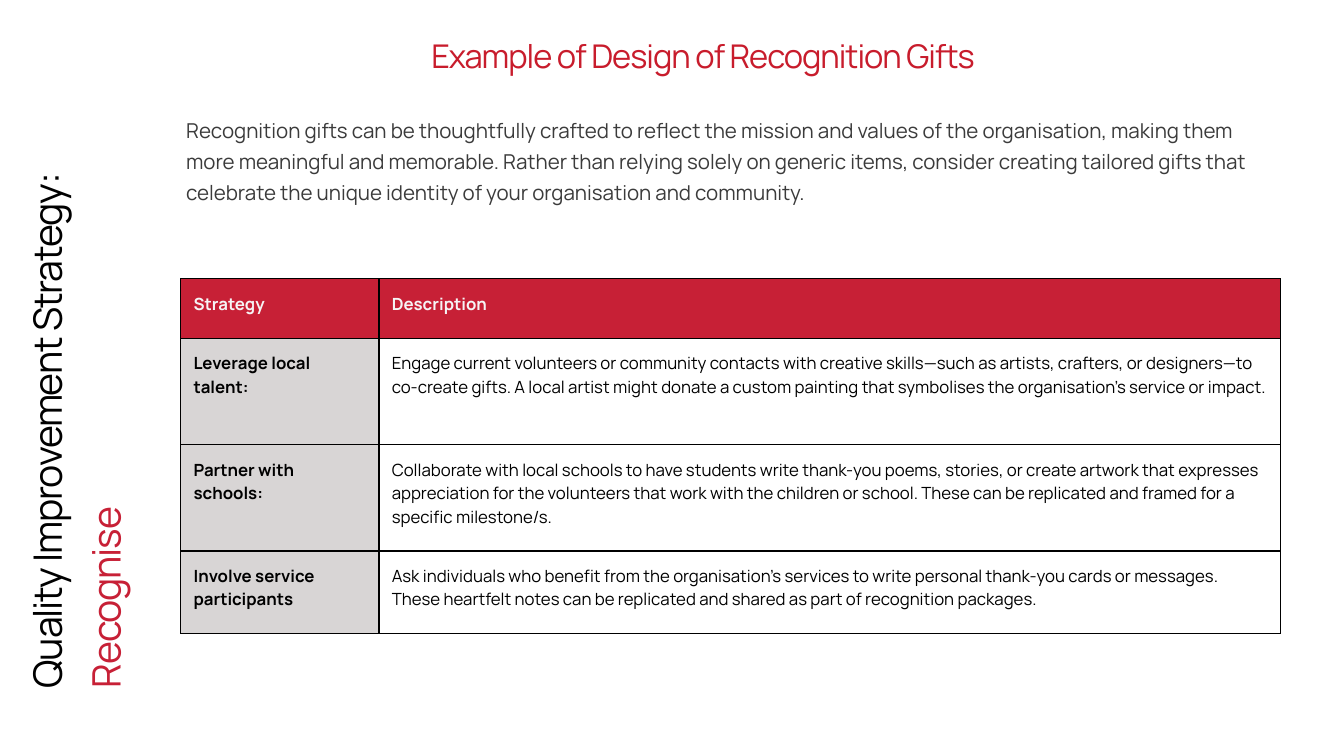
from lxml import etree
from pptx import Presentation
from pptx import util as u
from pptx.dml.color import RGBColor
from pptx.enum import text as t
from pptx.oxml import ns

Pt = u.Pt
hues = {"red": "C72036", "title": "C81C2C", "grey": "D8D5D5",
        "pale": "F6F4F5", "body": "3B3B3B", "black": "000000"}


def write(para, words, size=18, hue="black", lead=25.2, bold=False, gap=0):
    para.alignment = t.PP_ALIGN.LEFT
    para.line_spacing = Pt(lead)
    para.space_before = Pt(0)
    run = para.add_run()
    run.text = words
    font = run.font
    font.name, font.size, font.bold = "Manrope", Pt(size), bold
    font.color.rgb = RGBColor.from_string(hues[hue])
    if gap:
        font._element.set("spc", str(round(gap * 100)))


def place(box, left, top, width, height):
    box.left, box.top, box.width, box.height = map(Pt, (left, top, width, height))
    frame = box.text_frame
    frame.margin_left = frame.margin_right = Pt(0)
    frame.margin_top = frame.margin_bottom = Pt(0)
    frame.word_wrap = True
    frame.auto_size = t.MSO_AUTO_SIZE.NONE
    frame.vertical_anchor = t.MSO_ANCHOR.TOP
    return frame.paragraphs[0]


deck = Presentation()
deck.slide_width, deck.slide_height = Pt(1440), Pt(810)
slide = deck.slides.add_slide(deck.slide_layouts[1])

rows = [
    ("Strategy", "Description"),
    ("Leverage local talent:",
     "Engage current volunteers or community contacts with creative skills—such as "
     "artists, crafters, or designers—to co-create gifts. A local artist might donate "
     "a custom painting that symbolises the organisation’s service or impact."),
    ("Partner with schools:",
     "Collaborate with local schools to have students write thank-you poems, stories, "
     "or create artwork that expresses appreciation for the volunteers that work with "
     "the children or school. These can be replicated and framed for a specific "
     "milestone/s."),
    ("Involve service participants",
     "Ask individuals who benefit from the organisation’s services to write personal "
     "thank-you cards or messages. These heartfelt notes can be replicated and shared "
     "as part of recognition packages."),
]
wides = [212.4, 965.5]
highs = [64, 113.8, 113.8, 88.6]
grid = slide.shapes.add_table(len(rows), len(wides), Pt(193.7), Pt(298.8),
                              Pt(sum(wides)), Pt(sum(highs))).table
grid.first_row = grid.horz_banding = False
for col, wide in zip(grid.columns, wides):
    col.width = Pt(wide)

for r, row in enumerate(rows):
    grid.rows[r].height = Pt(highs[r])
    for c, words in enumerate(row):
        cell = grid.cell(r, c)
        cell.margin_left = cell.margin_right = Pt(13.7)
        cell.margin_top = cell.margin_bottom = Pt(13.7)
        props = cell._tc.get_or_add_tcPr()
        for side in ("lnL", "lnR", "lnT", "lnB"):
            line = etree.SubElement(props, ns.qn("a:" + side), w=str(Pt(1.5)))
            fill = etree.SubElement(line, ns.qn("a:solidFill"))
            etree.SubElement(fill, ns.qn("a:srgbClr"), val=hues["black"])
        head = r == 0
        if head or c == 0:
            cell.fill.solid()
            cell.fill.fore_color.rgb = RGBColor.from_string(hues["red" if head else "grey"])
        else:
            cell.fill.background()
        write(cell.text_frame.paragraphs[0], words,
              hue="pale" if head else "black", bold=head or c == 0)

side = slide.shapes.add_textbox(0, 0, 0, 0)
side.rotation = 270
para = place(side, -235.4, 364.3, 620, 126)
write(para, "Quality Improvement Strategy: ", size=42, lead=63, gap=-1.3)
write(para, "Recognise", size=42, hue="red", lead=63, gap=-1.3)

para = place(slide.shapes.title, 462.2, 35.3, 639.4, 91.4)
write(para, "Example of Design of Recognition Gifts",
      size=35, hue="title", lead=45.5, gap=-1.1)

para = place(slide.placeholders[1], 199.4, 120.2, 1165.7, 99.4)
write(para, "Recognition gifts can be thoughtfully crafted to reflect the mission and "
      "values of the organisation, making them more meaningful and memorable. Rather "
      "than relying solely on generic items, consider creating tailored gifts that "
      "celebrate the unique identity of your organisation and community.",
      size=22, hue="body", lead=33)
props = para._p.get_or_add_pPr()
props.set("marL", "0")
props.set("indent", "0")
etree.SubElement(props, ns.qn("a:buNone"))

deck.save("out.pptx")
